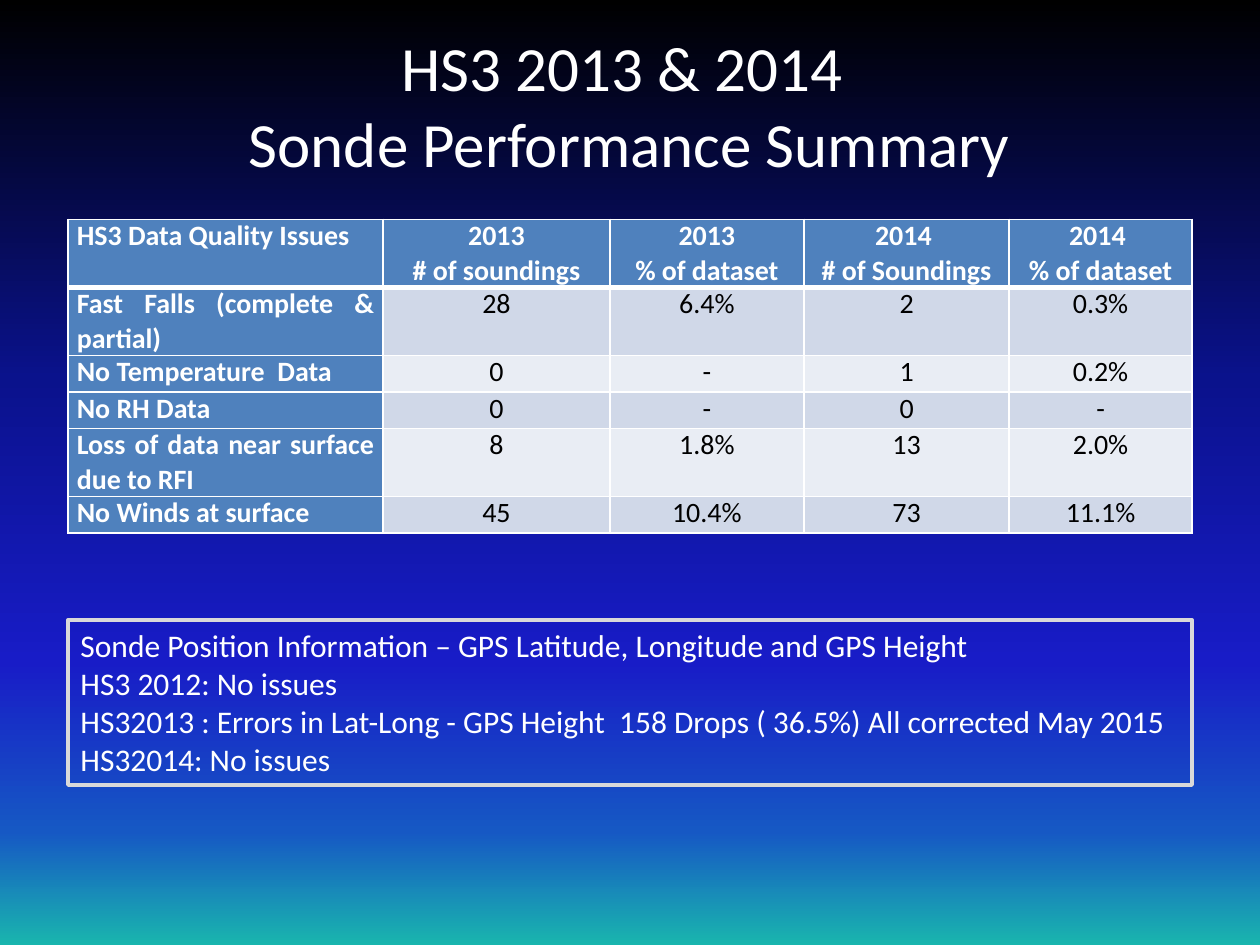
from dataclasses import dataclass

from lxml.etree import SubElement
from pptx import Presentation
from pptx.dml.color import RGBColor
from pptx.enum.shapes import MSO_SHAPE
from pptx.enum.text import MSO_ANCHOR, MSO_AUTO_SIZE, PP_ALIGN
from pptx.oxml.ns import qn
from pptx.util import Inches, Pt

FONT = "Calibri"
WHITE, BLACK, HEADER_BLUE = "FFFFFF", "000000", "4F81BD"
BANDS = ("D0D8E8", "E9EDF4")
SKY = [(0, "000000"), (40, "0A128C"), (70, "181CC7"), (88, "1658C4"), (100, "19B5AE")]
LEFT, WIDTH = 0.54, 8.92
COLUMN_WIDTHS = (2.5, 1.8, 1.54, 1.63, 1.45)
ONE_LINE, TWO_LINES = 0.29, 0.54


@dataclass
class Issue:
    label: str
    values: tuple[str, ...]
    height: float = ONE_LINE


HEADINGS = Issue(
    "HS3 Data Quality Issues",
    ("2013\n# of soundings", "2013\n% of dataset", "2014 \n# of Soundings", "2014 \n% of dataset"),
    TWO_LINES,
)
ISSUES = [
    Issue("Fast Falls (complete & partial)", ("28", "6.4%", "2", "0.3%"), TWO_LINES),
    Issue("No Temperature  Data", ("0", "-", "1", "0.2%")),
    Issue("No RH Data", ("0", "-", "0", "-")),
    Issue("Loss of data near surface due to RFI", ("8", "1.8%", "13", "2.0%"), TWO_LINES),
    Issue("No Winds at surface ", ("45", "10.4%", "73", "11.1%")),
]
POSITION_NOTES = """Sonde Position Information – GPS Latitude, Longitude and GPS Height
HS3 2012: No issues
HS32013 : Errors in Lat-Long - GPS Height  158 Drops ( 36.5%) All corrected May 2015
HS32014: No issues"""


def rgb(value: str) -> RGBColor:
    return RGBColor.from_string(value)


def write(frame, text: str, *, size: float, color: str = WHITE, bold: bool = False,
          align: PP_ALIGN = PP_ALIGN.LEFT) -> None:
    """Put each line of text in its own formatted paragraph."""
    frame.text = text
    for paragraph in frame.paragraphs:
        paragraph.alignment = align
        for run in paragraph.runs:
            font = run.font
            font.name, font.size, font.bold = FONT, Pt(size), bold
            font.color.rgb = rgb(color)


def paint_background(slide, stops: list[tuple[int, str]]) -> None:
    fill = slide.background.fill
    fill.gradient()
    fill.gradient_angle = 270
    stop_list = slide.element.find(".//" + qn("a:gsLst"))
    for old_stop in list(stop_list):
        stop_list.remove(old_stop)
    for percent, color in stops:
        stop = SubElement(stop_list, qn("a:gs"), pos=str(percent * 1000))
        SubElement(stop, qn("a:srgbClr"), val=color)


def draw_borders(cell, top: float, bottom: float) -> None:
    properties = cell._tc.get_or_add_tcPr()
    for side, points in (("L", 1), ("R", 1), ("T", top), ("B", bottom)):
        line = SubElement(properties, qn("a:ln" + side), w=str(Pt(points)))
        SubElement(SubElement(line, qn("a:solidFill")), qn("a:srgbClr"), val=WHITE)


def draw_issue_table(slide, top: float) -> None:
    rows = [HEADINGS, *ISSUES]
    height = sum(row.height for row in rows)
    table = slide.shapes.add_table(
        len(rows), len(COLUMN_WIDTHS), Inches(LEFT), Inches(top), Inches(WIDTH), Inches(height)
    ).table
    for column, width in zip(table.columns, COLUMN_WIDTHS):
        column.width = Inches(width)
    for r, issue in enumerate(rows):
        table.rows[r].height = Inches(issue.height)
        for c, text in enumerate((issue.label, *issue.values)):
            cell = table.cell(r, c)
            heading = r == 0 or c == 0
            # The rule under the headings is heavier than the others
            draw_borders(cell, top=3 if r == 1 else 1, bottom=3 if r == 0 else 1)
            cell.fill.solid()
            cell.fill.fore_color.rgb = rgb(HEADER_BLUE if heading else BANDS[(r - 1) % 2])
            cell.margin_left = cell.margin_right = Inches(0.07)
            cell.margin_top = cell.margin_bottom = 0
            write(cell.text_frame, text, size=16, color=WHITE if heading else BLACK,
                  bold=heading, align=PP_ALIGN.JUSTIFY if c == 0 else PP_ALIGN.CENTER)


def draw_position_box(slide, top: float, height: float) -> None:
    box = slide.shapes.add_shape(
        MSO_SHAPE.RECTANGLE, Inches(LEFT), Inches(top), Inches(WIDTH), Inches(height)
    )
    box.shadow.inherit = False
    box.fill.background()
    box.line.color.rgb = rgb("D9D9D9")
    box.line.width = Pt(2.25)
    frame = box.text_frame
    frame.word_wrap = False
    frame.auto_size = MSO_AUTO_SIZE.SHAPE_TO_FIT_TEXT
    frame.vertical_anchor = MSO_ANCHOR.TOP
    write(frame, POSITION_NOTES, size=18)


def main() -> None:
    deck = Presentation()
    deck.slide_width, deck.slide_height = Inches(10), Inches(7.5)
    slide = deck.slides.add_slide(deck.slide_layouts[5])
    paint_background(slide, SKY)

    # Title
    title = slide.shapes.title
    title.left, title.top = Inches(1.85), Inches(0.18)
    title.width, title.height = Inches(6.29), Inches(1.31)
    title.text_frame.word_wrap = False
    title.text_frame.auto_size = MSO_AUTO_SIZE.SHAPE_TO_FIT_TEXT
    title.text_frame.vertical_anchor = MSO_ANCHOR.TOP
    write(title.text_frame, "HS3 2013 & 2014 \nSonde Performance Summary", size=36,
          align=PP_ALIGN.CENTER)

    # Data quality and position summaries
    draw_issue_table(slide, top=1.74)
    draw_position_box(slide, top=4.92, height=1.31)
    deck.save("out.pptx")


if __name__ == "__main__":
    main()
